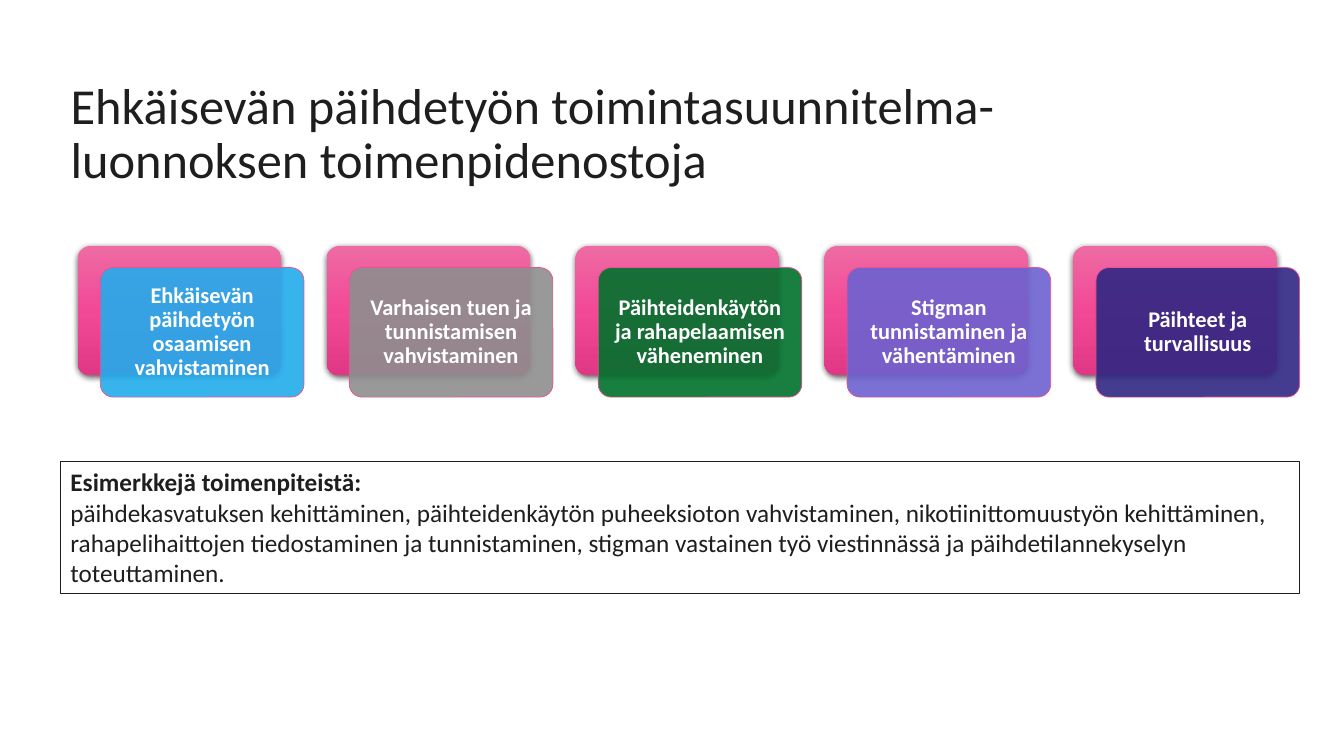
from lxml import etree
from pptx import Presentation
from pptx.dml.color import RGBColor
from pptx.enum import shapes, text
from pptx.oxml import ns
from pptx.util import Inches, Pt

COLORS = {
    "ink": "1E1E1E", "white": "FFFFFF", "edge": "EA5197", "shadow": "000000",
    "pink_top": "EE6AA3", "pink_middle": "F24996", "pink_bottom": "E03885",
    "blue": "23ACEC", "grey": "8E8E8E", "green": "00722C",
    "violet": "6D62D0", "indigo": "302783",
}
CARDS = [
    ("Ehkäisevän päihdetyön osaamisen vahvistaminen", "blue"),
    ("Varhaisen tuen ja tunnistamisen vahvistaminen", "grey"),
    ("Päihteidenkäytön ja rahapelaamisen väheneminen", "green"),
    ("Stigman tunnistaminen ja vähentäminen", "violet"),
    ("Päihteet ja turvallisuus", "indigo"),
]
TITLE = "Ehkäisevän päihdetyön toimintasuunnitelma-luonnoksen toimenpidenostoja"
EXAMPLES_HEADING = "Esimerkkejä toimenpiteistä:"
EXAMPLES = (
    "päihdekasvatuksen kehittäminen, päihteidenkäytön puheeksioton vahvistaminen, "
    "nikotiinittomuustyön kehittäminen, rahapelihaittojen tiedostaminen ja "
    "tunnistaminen, stigman vastainen työ viestinnässä ja päihdetilannekyselyn "
    "toteuttaminen."
)


def color(name):
    """Return the named colour."""
    return RGBColor.from_string(COLORS[name])


def set_values(target, **values):
    """Set each given attribute on the target."""
    for name, value in values.items():
        setattr(target, name, value)


def set_font(font, size, name, bold=False):
    """Format a font in the slide's typeface."""
    set_values(font, name="Calibri", size=Pt(size), bold=bold)
    font.color.rgb = color(name)


def add_element(parent, tag, **attributes):
    """Append a drawing element with its attributes."""
    values = {key: str(value) for key, value in attributes.items()}
    return etree.SubElement(parent, ns.qn(tag), values)


def add_box(slide, kind, left, top, width, height):
    """Add a shape without the theme's shadow."""
    lengths = [Inches(value) for value in (left, top, width, height)]
    shape = slide.shapes.add_shape(kind, *lengths)
    shape.shadow.inherit = False
    if kind == shapes.MSO_SHAPE.ROUNDED_RECTANGLE:
        shape.adjustments[0] = 0.1
    return shape


def style_back(shape):
    """Give a back card its pink gradient and soft shadow."""
    shape.line.fill.background()
    shape.fill.gradient()
    shape.fill.gradient_angle = 270
    properties = shape._element.spPr
    stops = properties.find(ns.qn("a:gradFill")).find(ns.qn("a:gsLst"))
    for stop in list(stops):
        stops.remove(stop)
    for index, name in enumerate(("pink_top", "pink_middle", "pink_bottom")):
        stop = add_element(stops, "a:gs", pos=index * 50000)
        add_element(stop, "a:srgbClr", val=COLORS[name])
    shadow = add_element(
        properties.find(ns.qn("a:effectLst")), "a:outerShdw",
        blurRad=Pt(4.5), dist=Pt(1.5), dir=5400000, algn="ctr", rotWithShape=0)
    shade = add_element(shadow, "a:srgbClr", val=COLORS["shadow"])
    add_element(shade, "a:alpha", val=63000)


def add_card(slide, left, top, width, height, label, fill_name):
    """Draw a pink back card and the translucent labelled card over it."""
    offset_x, offset_y = 0.225, 0.215
    size = (width - offset_x, height - offset_y)
    kind = shapes.MSO_SHAPE.ROUNDED_RECTANGLE
    style_back(add_box(slide, kind, left, top, *size))

    front = add_box(slide, kind, left + offset_x, top + offset_y, *size)
    front.fill.solid()
    front.fill.fore_color.rgb = color(fill_name)
    fill = front._element.spPr.find(ns.qn("a:solidFill"))
    add_element(fill[0], "a:alpha", val=90000)
    front.line.color.rgb = color("edge")
    front.line.width = Pt(0.5)
    frame = front.text_frame
    margin = Inches(0.07)
    set_values(frame, word_wrap=True, vertical_anchor=text.MSO_ANCHOR.MIDDLE,
               margin_left=margin, margin_right=margin,
               margin_top=margin, margin_bottom=margin)
    paragraph = frame.paragraphs[0]
    paragraph.text = label
    set_values(paragraph, alignment=text.PP_ALIGN.CENTER, line_spacing=0.9)
    set_font(paragraph.font, 16, "white", bold=True)


def add_cards(slide, left, top, width, height):
    """Spread the cards evenly across the box."""
    card_width = 2.245
    step = (width - card_width) / (len(CARDS) - 1)
    for index, (label, fill_name) in enumerate(CARDS):
        add_card(slide, left + index * step, top, card_width, height, label, fill_name)


def add_title(slide, left, top, width, height):
    """Place and format the title placeholder."""
    title = slide.shapes.title
    set_values(title, left=Inches(left), top=Inches(top),
               width=Inches(width), height=Inches(height))
    frame = title.text_frame
    set_values(frame, word_wrap=True, auto_size=text.MSO_AUTO_SIZE.NONE,
               vertical_anchor=text.MSO_ANCHOR.BOTTOM)
    paragraph = frame.paragraphs[0]
    paragraph.text = TITLE
    set_values(paragraph, alignment=text.PP_ALIGN.LEFT, line_spacing=0.9)
    set_font(paragraph.font, 36, "ink")


def add_examples(slide, left, top, width, height):
    """Draw the outlined box with the example measures."""
    box = add_box(slide, shapes.MSO_SHAPE.RECTANGLE, left, top, width, height)
    box.fill.background()
    box.line.color.rgb = color("ink")
    box.line.width = Pt(0.75)
    frame = box.text_frame
    set_values(frame, word_wrap=True, vertical_anchor=text.MSO_ANCHOR.TOP,
               auto_size=text.MSO_AUTO_SIZE.SHAPE_TO_FIT_TEXT)
    paragraph = frame.paragraphs[0]
    paragraph.alignment = text.PP_ALIGN.LEFT
    heading = paragraph.add_run()
    heading.text = EXAMPLES_HEADING
    set_font(heading.font, 18, "ink", bold=True)
    paragraph.add_line_break()
    body = paragraph.add_run()
    body.text = EXAMPLES
    set_font(body.font, 18, "ink")


def main():
    """Build and save the slide."""
    presentation = Presentation()
    set_values(presentation, slide_width=Inches(13.33), slide_height=Inches(7.5))
    slide = presentation.slides.add_slide(presentation.slide_layouts[5])
    add_title(slide, 0.6, 0.95, 11.22, 0.98)
    add_cards(slide, 0.77, 2.44, 12.12, 1.5)
    add_examples(slide, 0.6, 4.58, 12.29, 1.31)
    presentation.save("out.pptx")


if __name__ == "__main__":
    main()
